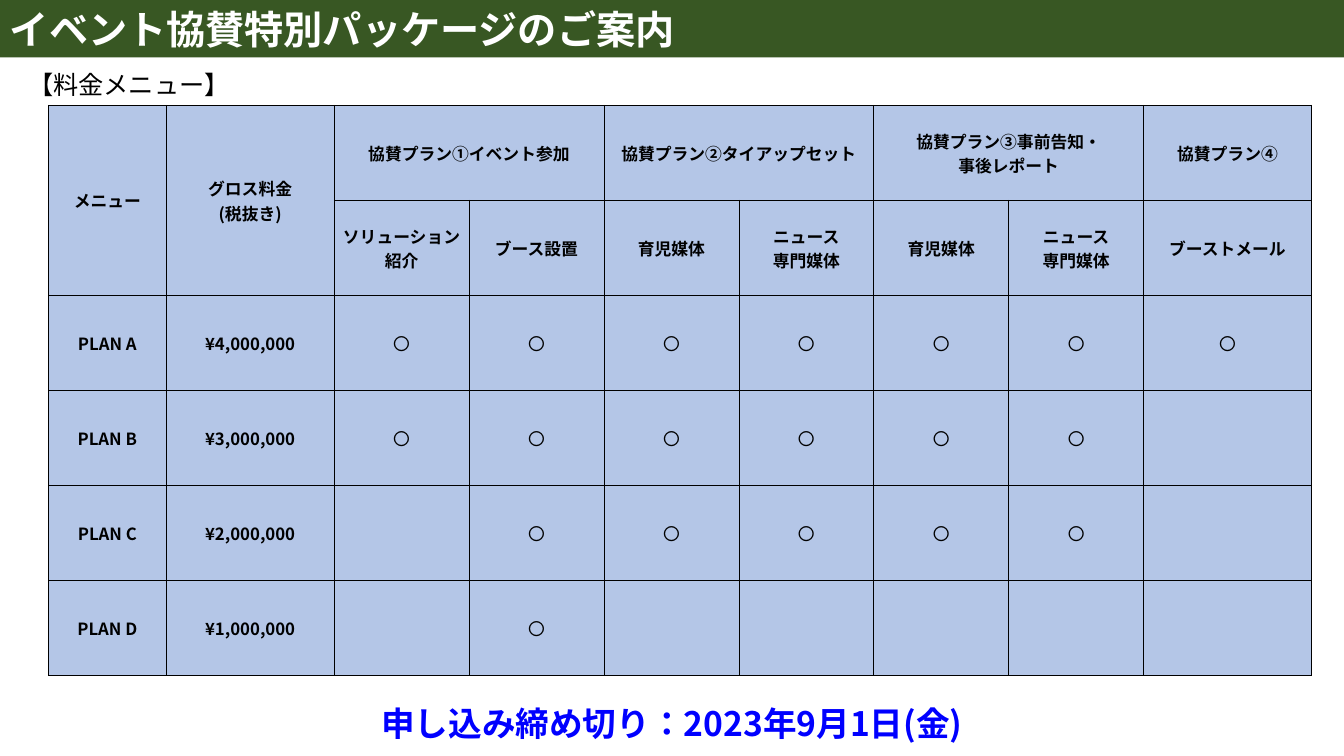
from lxml import etree
from pptx import Presentation
from pptx.dml.color import RGBColor
from pptx.enum.lang import MSO_LANGUAGE_ID
from pptx.enum.shapes import MSO_SHAPE
from pptx.enum.text import MSO_ANCHOR, PP_ALIGN
from pptx.oxml.ns import qn
from pptx.util import Cm, Pt

RECT = MSO_SHAPE.RECTANGLE
MIDDLE = MSO_ANCHOR.MIDDLE
LEFT, CENTER = PP_ALIGN.LEFT, PP_ALIGN.CENTER
JAPANESE = MSO_LANGUAGE_ID.JAPANESE
FONT = "Noto Sans CJK JP"

GREEN = RGBColor(0x38, 0x57, 0x23)
WHITE = RGBColor(0xFF, 0xFF, 0xFF)
BLACK = RGBColor(0, 0, 0)
BLUE = RGBColor(0, 0, 0xFF)
CELL_BLUE = RGBColor(0xB4, 0xC6, 0xE7)

# Content: "\n" starts a paragraph, "\v" breaks a line
TITLE = "イベント協賛特別パッケージのご案内"
SUBTITLE = "【料金メニュー】"
DEADLINE = "申し込み締め切り：2023年9月1日(金)"
MARK = "〇"
HEADERS = [
    ["メニュー", "グロス料金\v(税抜き)", "協賛プラン①イベント参加", "",
     "協賛プラン②タイアップセット", "", "協賛プラン③事前告知・\n事後レポート", "",
     "協賛プラン④"],
    ["", "", "ソリューション紹介", "ブース設置", "育児媒体", "ニュース\n専門媒体",
     "育児媒体", "ニュース\n専門媒体", "ブーストメール"],
]
# Plan, price, first and last marked option
PLANS = [
    ("PLAN A", "¥4,000,000", 0, 6),
    ("PLAN B", "¥3,000,000", 0, 5),
    ("PLAN C", "¥2,000,000", 1, 5),
    ("PLAN D", "¥1,000,000", 1, 1),
]
OPTIONS = 7
MERGES = [(0, 0, 1, 0), (0, 1, 1, 1), (0, 2, 0, 3), (0, 4, 0, 5), (0, 6, 0, 7)]

# Layout in centimetres
SLIDE_W, SLIDE_H = 33.87, 19.05
TABLE_X, TABLE_Y = 1.22, 2.65
COL_WIDTHS = [2.97, 4.23] + [3.4] * 6 + [4.23]
ROW_H = 2.395


def write(tf, text, size=12, color=BLACK, bold=False, align=LEFT, spacing=None):
    tf.word_wrap = True
    for i, line in enumerate(text.split("\n")):
        p = tf.paragraphs[0] if i == 0 else tf.add_paragraph()
        p.alignment = align
        if spacing:
            p.line_spacing = Pt(spacing)
        for j, part in enumerate(line.split("\v")):
            if j:
                p.add_line_break()
            r = p.add_run()
            r.text = part
            r.font.name, r.font.size, r.font.bold = FONT, Pt(size), bold
            r.font.color.rgb = color
            r.font.language_id = JAPANESE
            ea = etree.SubElement(r.font._element, qn("a:ea"))
            ea.set("typeface", FONT)


def add_borders(cell):
    tcPr = cell._tc.get_or_add_tcPr()
    for i, side in enumerate(("a:lnL", "a:lnR", "a:lnT", "a:lnB")):
        ln = etree.Element(qn(side), w=str(Pt(0.5)))
        fill = etree.SubElement(ln, qn("a:solidFill"))
        etree.SubElement(fill, qn("a:srgbClr"), val=str(BLACK))
        tcPr.insert(i, ln)


prs = Presentation()
prs.slide_width, prs.slide_height = Cm(SLIDE_W), Cm(SLIDE_H)
s = prs.slides.add_slide(prs.slide_layouts[6])

# Title bar
sp = s.shapes.add_shape(RECT, 0, 0, Cm(SLIDE_W), Cm(1.45))
sp.shadow.inherit = False
sp.fill.solid()
sp.fill.fore_color.rgb = GREEN
sp.line.fill.background()
sp.text_frame.vertical_anchor = MIDDLE
write(sp.text_frame, TITLE, size=28, color=WHITE, bold=True)

# Subtitle
sp = s.shapes.add_textbox(Cm(0.46), Cm(1.63), Cm(12.62), Cm(1.02))
write(sp.text_frame, SUBTITLE, size=18)

# Price table
rows = HEADERS + [
    [plan, price] + [MARK if first <= i <= last else "" for i in range(OPTIONS)]
    for plan, price, first, last in PLANS
]
table = s.shapes.add_table(len(rows), len(COL_WIDTHS), Cm(TABLE_X), Cm(TABLE_Y),
                           Cm(sum(COL_WIDTHS)), Cm(ROW_H * len(rows))).table
for col, width in zip(table.columns, COL_WIDTHS):
    col.width = Cm(width)
for row, texts in zip(table.rows, rows):
    row.height = Cm(ROW_H)
    for cell, text in zip(row.cells, texts):
        cell.fill.solid()
        cell.fill.fore_color.rgb = CELL_BLUE
        cell.vertical_anchor = MIDDLE
        cell.margin_left = cell.margin_right = cell.margin_top = Cm(0.02)
        cell.margin_bottom = 0
        if text:
            write(cell.text_frame, text, bold=text != MARK, align=CENTER)
        add_borders(cell)
for top, left, bottom, right in MERGES:
    table.cell(top, left).merge(table.cell(bottom, right))

# Deadline
sp = s.shapes.add_textbox(0, Cm(17.12), Cm(SLIDE_W), Cm(1.55))
write(sp.text_frame, DEADLINE, size=24, color=BLUE, bold=True, align=CENTER, spacing=42)

prs.save("out.pptx")
